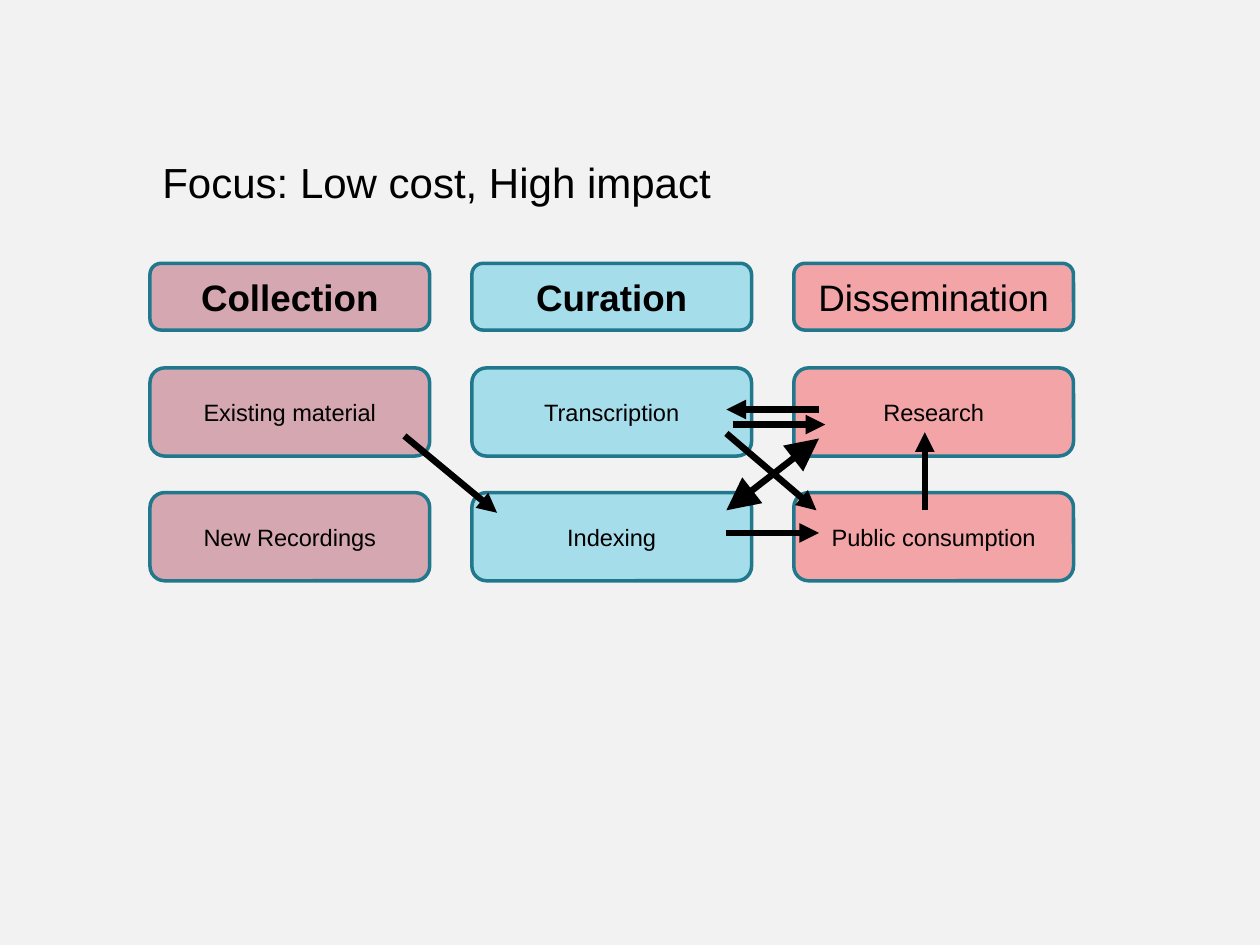
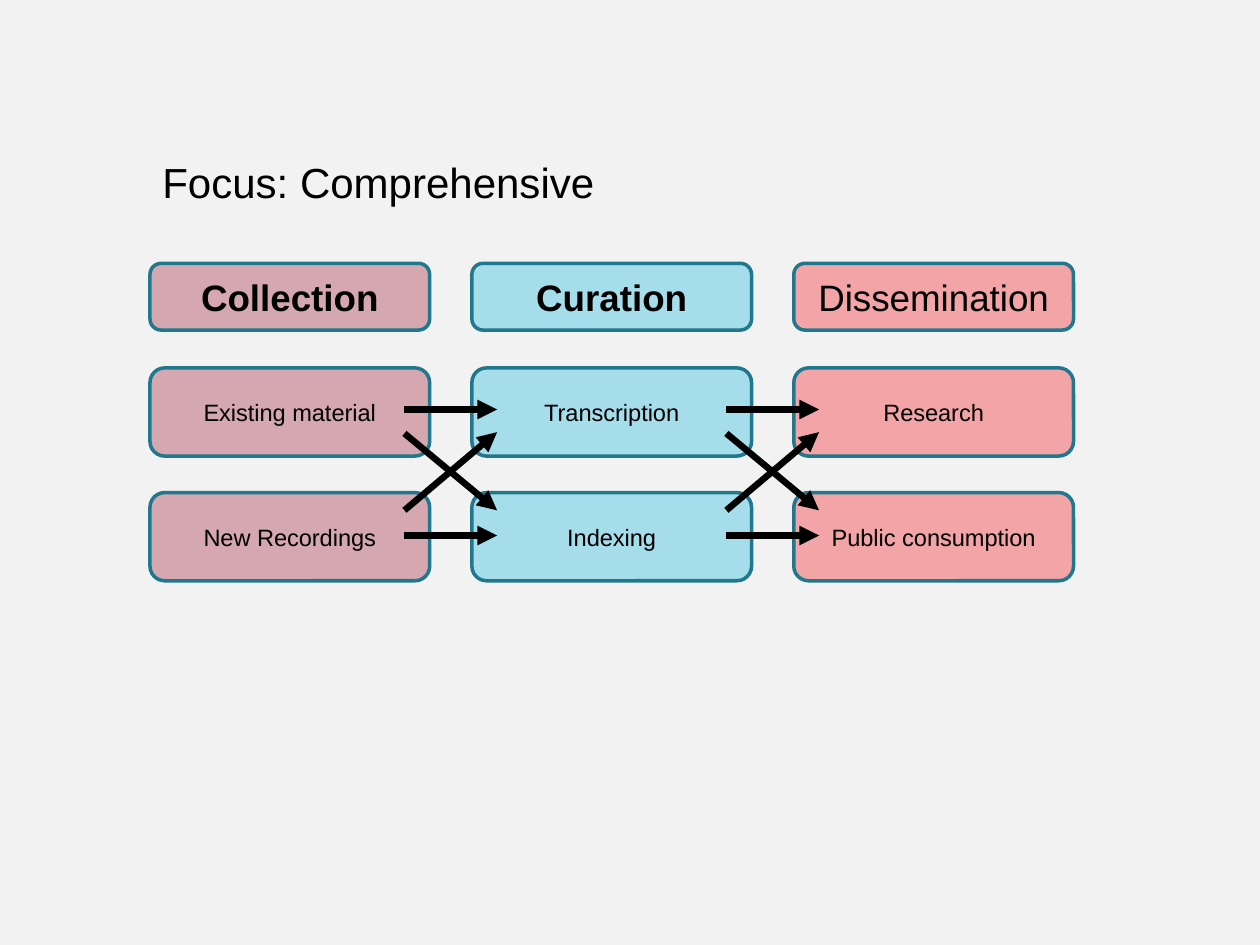
from lxml import etree
from pptx import Presentation
from pptx import util as u
from pptx.dml.color import RGBColor
from pptx.enum import shapes, text
from pptx.oxml.ns import qn

BACKDROP = RGBColor(0xF2, 0xF2, 0xF2)
OUTLINE = RGBColor(0x21, 0x78, 0x8D)
INK = RGBColor(0, 0, 0)
ROSE = RGBColor(0xD5, 0xA7, 0xB1)
AQUA = RGBColor(0xA6, 0xDD, 0xEA)
CORAL = RGBColor(0xF2, 0xA4, 0xA7)

LEFT, COLUMN_STEP, COLUMN_WIDTH = 1.19, 2.555, 2.22
HEADING_ROW = (2.09, 0.53)
STEP_ROWS = [(2.92, 0.7), (3.91, 0.7)]
OVERLAP = 0.2

STAGES = [
    ("Collection", True, ROSE, ["Existing material", "New Recordings"]),
    ("Curation", True, AQUA, ["Transcription", "Indexing"]),
    ("Dissemination", False, CORAL, ["Research", "Public consumption"]),
]

GAP_ENDS = []
for gap in range(2):
    next_left = LEFT + (gap + 1) * COLUMN_STEP
    GAP_ENDS.append((next_left - COLUMN_STEP + COLUMN_WIDTH - OVERLAP, next_left + OVERLAP))
(collection_out, curation_in), (curation_out, dissemination_in) = GAP_ENDS

UPPER, UPPER_CORNER, LOWER_CORNER, LOWER = 3.25, 3.44, 4.05, 4.25
RESEARCH_X = 7.34

FOCUSES = [
    ("Focus: Low cost, High impact", [
        (curation_out, LOWER - 0.02, dissemination_in, LOWER - 0.02, False),
        (collection_out, UPPER_CORNER + 0.02, curation_in, LOWER_CORNER + 0.02, False),
        (RESEARCH_X, LOWER_CORNER, RESEARCH_X, UPPER_CORNER - 0.01, False),
        (dissemination_in, UPPER_CORNER + 0.04, curation_out, LOWER_CORNER, True),
        (dissemination_in, UPPER, curation_out, UPPER, False),
        (curation_out, UPPER_CORNER, dissemination_in - 0.02, LOWER_CORNER, False),
        (curation_out + 0.05, UPPER + 0.12, dissemination_in + 0.05, UPPER + 0.12, False),
    ]),
    ("Focus: Comprehensive", [
        (start, begin_y, end, end_y, False)
        for start, end in GAP_ENDS
        for begin_y, end_y in [(LOWER_CORNER, UPPER_CORNER - 0.01), (UPPER_CORNER, LOWER_CORNER),
                               (LOWER, LOWER), (UPPER, UPPER)]
    ]),
]


def write(box, words, **font_values):
    para = box.text_frame.paragraphs[0]
    span = para.add_run()
    span.text = words
    span.font.color.rgb = INK
    for name, value in {"name": "Arial", **font_values}.items():
        setattr(span.font, name, value)
    return para


def add_arrow(page, begin_x, begin_y, end_x, end_y, two_way):
    ends = [u.Inches(value) for value in (begin_x, begin_y, end_x, end_y)]
    arrow = page.shapes.add_connector(shapes.MSO_CONNECTOR.STRAIGHT, *ends)
    arrow.line.color.rgb = INK
    arrow.line.width = u.Pt(3.75)
    size = "lg" if two_way else "med"
    for tag in ["a:headEnd", "a:tailEnd"] if two_way else ["a:tailEnd"]:
        etree.SubElement(arrow.line._get_or_add_ln(), qn(tag), type="triangle", w=size, len=size)
    etree.SubElement(arrow._element.spPr, qn("a:effectLst"))


deck = Presentation()
deck.slide_width = u.Inches(10)
deck.slide_height = u.Inches(7.5)

for focus, arrows in FOCUSES:
    page = deck.slides.add_slide(deck.slide_layouts[6])
    page.background.fill.solid()
    page.background.fill.fore_color.rgb = BACKDROP

    title = page.shapes.add_textbox(u.Inches(LEFT), u.Inches(1.19), u.Inches(5.82), u.Inches(0.5))
    title.text_frame.word_wrap = True
    write(title, focus, size=u.Pt(24))

    for column, (heading, bold, colour, steps) in enumerate(STAGES):
        cells = [(heading, HEADING_ROW, {"size": u.Pt(21), "bold": bold})]
        cells += [(step, row, {"size": u.Pt(13.5)}) for step, row in zip(steps, STEP_ROWS)]
        for words, (top, height), font_values in cells:
            box = page.shapes.add_shape(
                shapes.MSO_SHAPE.ROUNDED_RECTANGLE,
                u.Inches(LEFT + column * COLUMN_STEP), u.Inches(top),
                u.Inches(COLUMN_WIDTH), u.Inches(height))
            box.shadow.inherit = False
            box.fill.solid()
            box.fill.fore_color.rgb = colour
            box.line.color.rgb = OUTLINE
            box.line.width = u.Pt(2)
            box.text_frame.word_wrap = True
            box.text_frame.vertical_anchor = text.MSO_ANCHOR.MIDDLE
            write(box, words, **font_values).alignment = text.PP_ALIGN.CENTER

    for arrow_values in arrows:
        add_arrow(page, *arrow_values)

deck.save("out.pptx")
